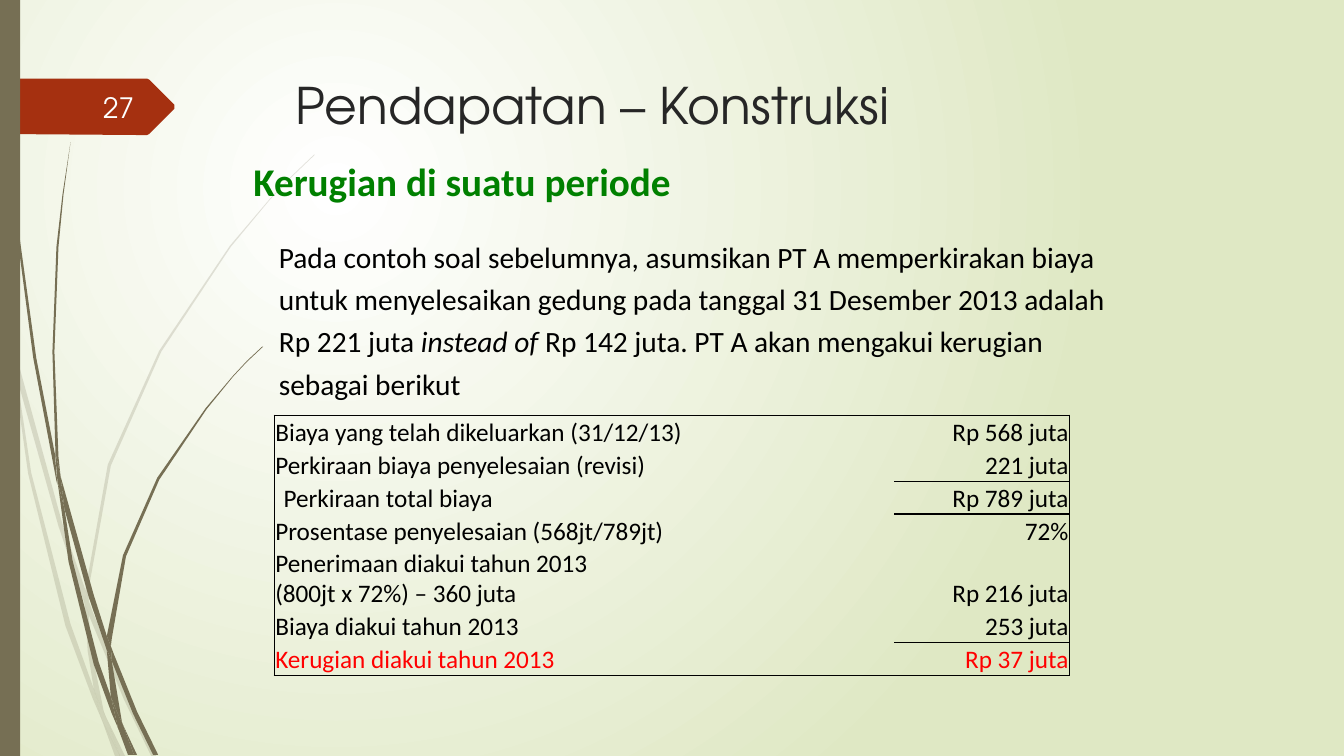
"""Build the slide on recognising a construction loss within a period."""
from dataclasses import dataclass
from lxml.etree import SubElement
from pptx import Presentation
from pptx.dml.color import RGBColor as Rgb
from pptx.enum.shapes import MSO_SHAPE as Preset
from pptx.enum.text import MSO_ANCHOR as Anchor, MSO_AUTO_SIZE as AutoSize, PP_ALIGN as Align
from pptx.oxml.ns import qn
from pptx.util import Pt


@dataclass(frozen=True)
class Theme:
    display: str = "TeX Gyre Adventor"
    text: str = "Calibri"
    title_size: int = 36
    heading_size: int = 28
    body_size: int = 21
    number_size: int = 20
    table_size: int = 18
    black: Rgb = Rgb.from_string("000000")
    title: Rgb = Rgb.from_string("262626")
    green: Rgb = Rgb.from_string("008000")
    red: Rgb = Rgb.from_string("FF0000")
    pale: Rgb = Rgb.from_string("FEFFFF")
    olive: Rgb = Rgb.from_string("766F54")
    rust: Rgb = Rgb.from_string("A53010")
    glow: Rgb = Rgb.from_string("FFFFFF")
    meadow: Rgb = Rgb.from_string("DFE8C4")


theme = Theme()


def write(frame, text, size, color=theme.black, font=theme.text, bold=False,
          align=Align.LEFT, spacing=1.0, before=0, after=0):
    """Write lines of text, with italics between asterisks."""
    for index, line in enumerate(text.split("\n")):
        paragraph = frame.add_paragraph() if index else frame.paragraphs[0]
        paragraph.alignment, paragraph.line_spacing = align, spacing
        paragraph.space_before, paragraph.space_after = Pt(before), Pt(after)
        for part, words in enumerate(line.split("*")):
            run = paragraph.add_run()
            run.text = words
            run.font.name, run.font.size = font, Pt(size)
            run.font.bold, run.font.italic = bold, part % 2 == 1
            run.font.color.rgb = color


deck = Presentation()
deck.slide_width, deck.slide_height = Pt(960), Pt(540)
slide = deck.slides.add_slide(deck.slide_layouts[1])
shapes = slide.shapes

backdrop = slide.background.fill
backdrop.gradient()
for stop, color in zip(backdrop.gradient_stops, (theme.glow, theme.meadow)):
    stop.color.rgb = color
gradient = slide._element.find(".//" + qn("a:gradFill"))
gradient.remove(gradient.find(qn("a:lin")))
circle = SubElement(gradient, qn("a:path"), {"path": "circle"})
SubElement(circle, qn("a:fillToRect"), {"l": "50000", "t": "50000", "r": "100000", "b": "100000"})

faint_blades = [
    [(11, 350), (9, 322), (0, 282), (0, 299), (10, 344)],
    [(58, 522), (84, 599), (85, 586), (62, 520), (14, 345), (17, 376)],
    [(92, 607), (88, 596), (88, 610), (123, 694), (150, 750), (155, 750), (127, 692)],
    [(119, 750), (124, 750), (105, 711)],
    [(93, 683), (70, 619), (31, 469), (17, 376), (11, 350), (28, 470), (65, 621),
     (92, 693), (101, 714), (99, 707)],
    [(84, 599), (87, 646), (93, 683), (96, 692), (105, 711), (103, 706), (91, 646),
     (88, 610), (88, 608)],
    [(88, 584), (110, 462), (160, 349), (229, 245), (268, 198), (290, 175), (312, 154), (312, 153),
     (289, 175), (268, 197), (228, 244), (158, 348), (107, 461), (85, 584), (85, 586), (88, 596)],
    [(101, 714), (114, 750), (119, 750)],
    [(88, 608), (88, 610), (88, 596), (85, 586), (84, 599)],
    [(96, 692), (93, 683), (99, 707), (101, 714), (119, 750), (105, 711)],
]
dark_blades = [
    [(7, 110), (17, 233), (33, 355), (56, 477), (57, 481), (55, 457), (55, 453), (36, 355),
     (19, 232), (8, 109), (5, 48), (4, 0), (3, 0), (4, 48)],
    [(88, 592), (106, 645), (106, 633), (106, 631), (93, 590), (60, 472), (64, 505)],
    [(113, 649), (110, 641), (111, 656), (132, 708), (152, 749), (157, 749), (136, 706)],
    [(110, 691), (98, 657), (72, 556), (64, 505), (57, 477), (68, 557), (93, 659),
     (111, 708), (117, 722), (116, 717)],
    [(60, 472), (58, 453), (54, 349), (58, 245), (63, 193), (70, 141), (62, 193),
     (56, 245), (52, 349), (55, 449)],
    [(133, 749), (136, 749), (122, 719)],
    [(57, 477), (64, 505), (60, 472), (55, 449), (55, 453)],
    [(111, 633), (125, 552), (158, 476), (205, 406), (231, 374), (245, 359), (261, 344), (260, 344),
     (245, 358), (231, 373), (204, 405), (156, 474), (122, 551), (106, 631), (110, 641)],
    [(117, 722), (127, 749), (131, 749)],
    [(106, 645), (110, 691), (116, 706), (122, 719), (121, 716), (111, 656), (109, 651)],
    [(106, 645), (109, 651), (111, 656), (110, 641), (106, 631), (106, 633)],
    [(116, 706), (110, 691), (116, 717), (117, 722), (130, 749), (133, 749), (122, 719)],
]
page_tag = [(173, 108), (148, 133), (146, 134), (136, 134), (0, 133), (0, 78), (136, 78),
            (146, 78), (148, 79), (173, 104)]
grid = 0.72
for outlines, color, opacity in ((faint_blades, theme.olive, 20), (dark_blades, theme.olive, 100),
                                 ([page_tag], theme.rust, 100)):
    for outline in outlines:
        corners = [(Pt(x * grid), Pt(y * grid)) for x, y in outline]
        contour = shapes.build_freeform(*corners[0])
        contour.add_line_segments(corners[1:])
        piece = contour.convert_to_shape()
        piece.shadow.inherit = False
        piece.line.fill.background()
        piece.fill.solid()
        piece.fill.fore_color.rgb = color
        if opacity < 100:
            SubElement(piece._element.find(".//" + qn("a:srgbClr")), qn("a:alpha"),
                       {"val": str(opacity * 1000)})

side_bar = shapes.add_shape(Preset.RECTANGLE, 0, 0, Pt(14.4), Pt(540))
side_bar.shadow.inherit = False
side_bar.line.fill.background()
side_bar.fill.solid()
side_bar.fill.fore_color.rgb = theme.olive

title, story = slide.placeholders
number = shapes.add_textbox(0, 0, 0, 0)
heading = shapes.add_textbox(0, 0, 0, 0)
for holder, box, anchor in ((title, (204, 49, 702, 100.8), Anchor.TOP),
                            (number, (41.8, 62, 61.2, 28.8), Anchor.MIDDLE),
                            (story, (192, 162, 617.8, 129.6), Anchor.TOP),
                            (heading, (174, 109, 576, 41), Anchor.TOP)):
    holder.left, holder.top, holder.width, holder.height = map(Pt, box)
    holder.text_frame.word_wrap = True
    holder.text_frame.auto_size = AutoSize.NONE
    holder.text_frame.vertical_anchor = anchor

write(title.text_frame, "Pendapatan – Konstruksi", theme.title_size, theme.title, theme.display)
write(number.text_frame, "27", theme.number_size, theme.pale, theme.display, align=Align.RIGHT)
write(story.text_frame, "Pada contoh soal sebelumnya, asumsikan PT A memperkirakan biaya untuk "
      "menyelesaikan gedung pada tanggal 31 Desember 2013 adalah Rp 221 juta *instead of *"
      "Rp 142 juta. PT A akan mengakui kerugian sebagai berikut",
      theme.body_size, spacing=1.2, before=6)
story_format = story.text_frame.paragraphs[0]._p.get_or_add_pPr()
story_format.set("marL", "0")
story_format.set("indent", "0")
SubElement(story_format, qn("a:buNone"))
write(heading.text_frame, "Kerugian di suatu periode", theme.heading_size, theme.green,
      bold=True, before=8.4, after=5.6)

costs = [
    ("Biaya yang telah dikeluarkan (31/12/13)", "Rp 568 juta"),
    ("Perkiraan biaya penyelesaian (revisi)", "221 juta"),
    ("Perkiraan total biaya", "Rp 789 juta"),
    ("Prosentase penyelesaian (568jt/789jt)", "72%"),
    ("Penerimaan diakui tahun 2013\n(800jt x 72%) – 360 juta", "Rp 216 juta"),
    ("Biaya diakui tahun 2013", "253 juta"),
    ("Kerugian diakui tahun 2013", "Rp 37 juta"),
]
total_row, loss_row = 2, len(costs) - 1
rules = ({0: 1, 7: 1}, {0: 1, 2: 0.5, 3: 2, 6: 0.5, 7: 1})
calculation = shapes.add_table(len(costs), 2, Pt(195.8), Pt(296.6), Pt(568.1), Pt(185.8)).table
calculation.first_row = calculation.horz_banding = False
for column, width in zip(calculation.columns, (442.8, 125.3)):
    column.width = Pt(width)
for row, entries in enumerate(costs):
    calculation.rows[row].height = Pt(44.8 if "\n" in entries[0] else 23.5)
    for column, entry in enumerate(entries):
        cell = calculation.cell(row, column)
        cell.vertical_anchor = Anchor.BOTTOM
        cell.margin_left = Pt(6.8 if (row, column) == (total_row, 0) else 0.9)
        cell.margin_right = cell.margin_top = Pt(0.7)
        cell.margin_bottom = 0
        write(cell.text_frame, entry, theme.table_size,
              theme.red if row == loss_row else theme.black,
              align=Align.RIGHT if column else Align.LEFT)
        edges = {"a:lnL": 1 - column, "a:lnR": column,
                 "a:lnT": rules[column].get(row, 0), "a:lnB": rules[column].get(row + 1, 0)}
        for edge, weight in edges.items():
            border = SubElement(cell._tc.get_or_add_tcPr(), qn(edge), {"w": str(Pt(weight))})
            ink = SubElement(border, qn("a:solidFill" if weight else "a:noFill"))
            if weight:
                SubElement(ink, qn("a:srgbClr"), {"val": str(theme.black)})
        cell.fill.background()

deck.save("out.pptx")
